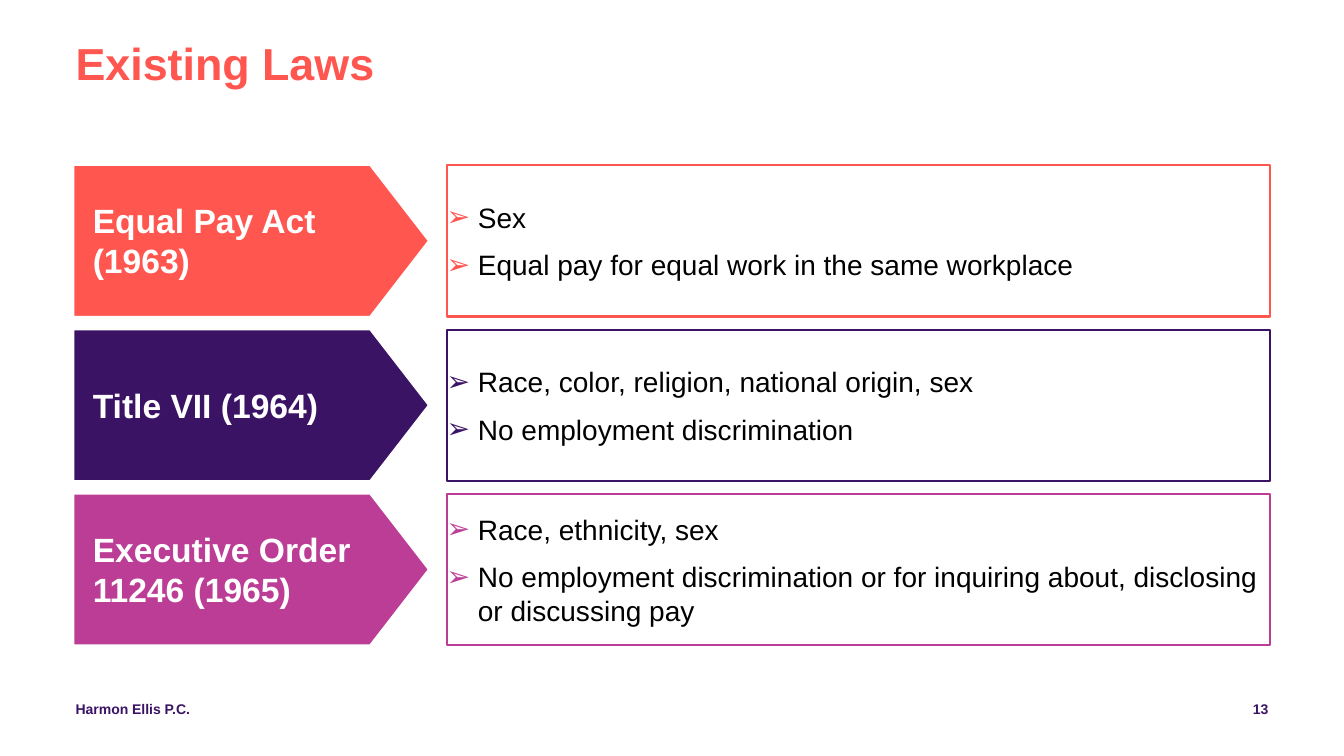
import pptx
import pptx.util
import pptx.dml.color
import pptx.enum.shapes
import pptx.enum.text
from lxml import etree

Inches = pptx.util.Inches
Pt = pptx.util.Pt
SHAPE = pptx.enum.shapes.MSO_SHAPE
ALIGN = pptx.enum.text.PP_ALIGN
ANCHOR = pptx.enum.text.MSO_ANCHOR

FONT = "Arial"
COLORS = {
    "coral": "FF5750",
    "purple": "3B1365",
    "magenta": "BC3D95",
    "white": "FFFFFF",
    "black": "000000",
}
LAWS = [
    ("Equal Pay Act (1963)", "coral",
     ["Sex", "Equal pay for equal work in the same workplace"]),
    ("Title VII (1964)", "purple",
     ["Race, color, religion, national origin, sex",
      "No employment discrimination"]),
    ("Executive Order 11246 (1965)", "magenta",
     ["Race, ethnicity, sex",
      "No employment discrimination or for inquiring about, "
      "disclosing or discussing pay"]),
]
ROW_TOP, ROW_STEP, ROW_HEIGHT = 1.64, 1.63, 1.5
ARROW_TIP = 0.58


def rgb(name):
    return pptx.dml.color.RGBColor.from_string(COLORS[name])


def prepare_frame(sp, anchor):
    tf = sp.text_frame
    tf.word_wrap = True
    tf.vertical_anchor = anchor
    tf.margin_left = tf.margin_right = tf.margin_top = tf.margin_bottom = 0
    return tf


def add_run(p, text, size, color, bold):
    r = p.add_run()
    r.text = text
    r.font.name = FONT
    r.font.size = Pt(size)
    r.font.bold = bold
    r.font.color.rgb = rgb(color)


def add_text(s, box, text, size, color, anchor=ANCHOR.TOP, align=ALIGN.LEFT):
    sp = s.shapes.add_textbox(*[Inches(v) for v in box])
    p = prepare_frame(sp, anchor).paragraphs[0]
    p.alignment = align
    add_run(p, text, size, color, True)
    return p


def add_box(s, kind, box, line, width):
    sp = s.shapes.add_shape(kind, *[Inches(v) for v in box])
    sp.shadow.inherit = False
    sp.line.color.rgb = rgb(line)
    sp.line.width = Pt(width)
    return sp


def add_bullet(p, color):
    pPr = p._p.get_or_add_pPr()
    pPr.set("marL", str(Inches(0.31)))
    pPr.set("indent", str(Inches(-0.31)))
    ns = pptx.oxml.ns.qn
    clr = etree.SubElement(pPr, ns("a:buClr"))
    etree.SubElement(clr, ns("a:srgbClr"), val=COLORS[color])
    etree.SubElement(pPr, ns("a:buFont"), typeface=FONT)
    etree.SubElement(pPr, ns("a:buChar"), char="➢")


def add_law_arrow(s, top, name, color):
    sp = add_box(s, SHAPE.PENTAGON, (0.73, top, 3.52, ROW_HEIGHT), "white", 1)
    sp.adjustments[0] = ARROW_TIP / ROW_HEIGHT
    sp.fill.solid()
    sp.fill.fore_color.rgb = rgb(color)
    p = add_text(s, (0.92, top + 0.08, 2.75, 1.33), name, 24, "white",
                 ANCHOR.MIDDLE)
    p.space_before = Pt(10)


def add_law_points(s, top, points, color):
    sp = add_box(s, SHAPE.RECTANGLE, (4.43, top, 8.17, ROW_HEIGHT), color, 1.5)
    sp.fill.background()
    tf = prepare_frame(sp, ANCHOR.MIDDLE)
    for i, point in enumerate(points):
        p = tf.add_paragraph() if i else tf.paragraphs[0]
        p.alignment = ALIGN.LEFT
        p.space_before = Pt(10)
        add_bullet(p, color)
        add_run(p, point, 20, "black", False)


def main():
    prs = pptx.Presentation()
    prs.slide_width = Inches(13.33)
    prs.slide_height = Inches(7.5)
    s = prs.slides.add_slide(prs.slide_layouts[6])

    title = add_text(s, (0.75, 0.06, 11.83, 1.19), "Existing Laws", 32,
                     "coral", ANCHOR.MIDDLE)
    title.line_spacing = 0.9
    for i, (name, color, points) in enumerate(LAWS):
        top = ROW_TOP + i * ROW_STEP
        add_law_arrow(s, top, name, color)
        add_law_points(s, top, points, color)
    add_text(s, (0.75, 6.95, 4.5, 0.4), "Harmon Ellis P.C.", 10, "purple")
    add_text(s, (9.58, 6.95, 3, 0.4), "13", 10, "purple", align=ALIGN.RIGHT)

    prs.save("out.pptx")


if __name__ == "__main__":
    main()
